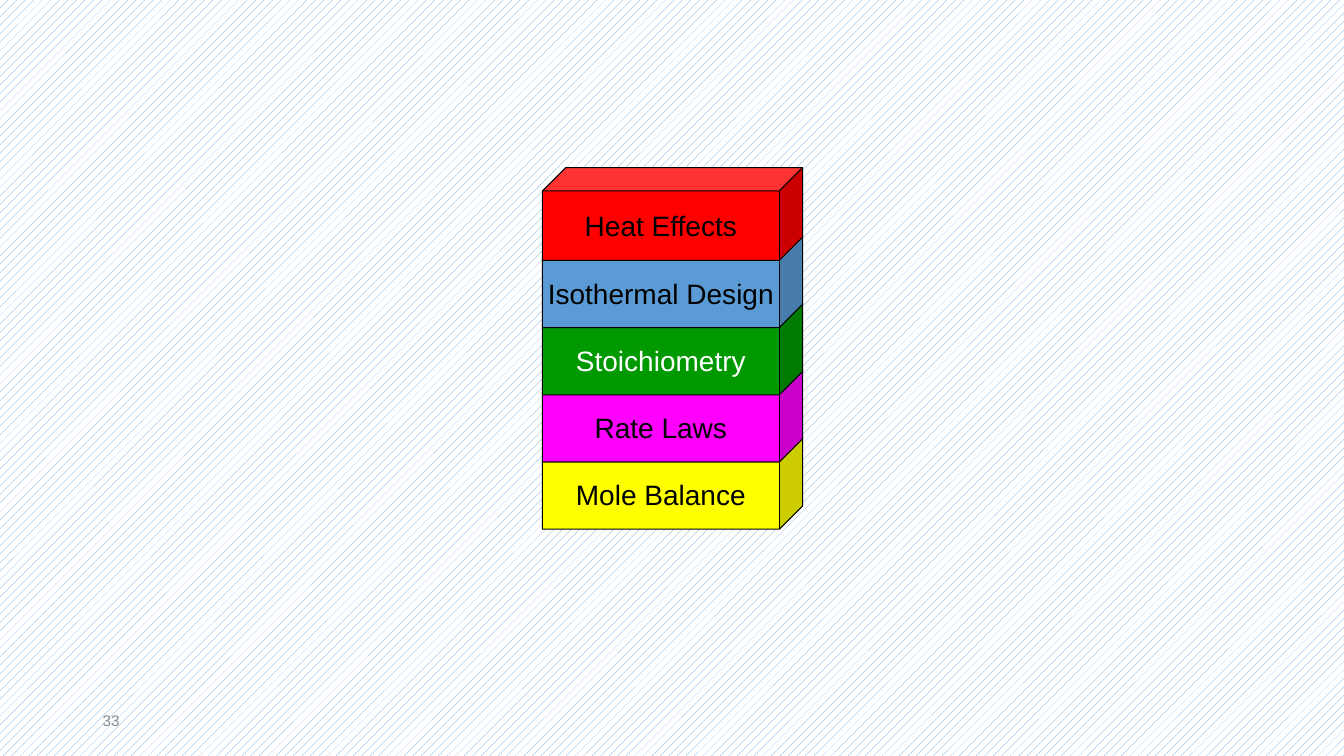
"""Build a slide with a stack of labelled reactor design blocks."""
from pptx import Presentation
from pptx.dml.color import RGBColor
from pptx.enum.dml import MSO_PATTERN
from pptx.enum.shapes import MSO_SHAPE
from pptx.enum.text import MSO_ANCHOR, PP_ALIGN
from pptx.util import Inches, Pt

BLOCKS = [
    ("Mole Balance", "FFFF00", "000000"),
    ("Rate Laws", "FF00FF", "000000"),
    ("Stoichiometry", "009900", "FFFFFF"),
    ("Isothermal Design", "5B9BD5", "000000"),
    ("Heat Effects", "FF0000", "000000"),
]
PAGE_NUMBER = "33"
STACK_LEFT, BOTTOM_TOP = 5.38, 4.33
BLOCK_WIDTH, BLOCK_HEIGHT = 2.58, 0.92
STEP = 2 / 3


def paint(color_format, value):
    color_format.rgb = RGBColor.from_string(value)


def write(shape, text, size, color, align, wrap):
    frame = shape.text_frame
    frame.text = text
    frame.word_wrap = wrap
    frame.vertical_anchor = MSO_ANCHOR.MIDDLE
    para = frame.paragraphs[0]
    para.alignment = align
    font = para.runs[0].font
    font.name = "Arial"
    font.size = Pt(size)
    paint(font.color, color)


def add_block(page, level, label, fill, text_color):
    block = page.shapes.add_shape(
        MSO_SHAPE.CUBE, Inches(STACK_LEFT), Inches(BOTTOM_TOP - level * STEP),
        Inches(BLOCK_WIDTH), Inches(BLOCK_HEIGHT))
    block.adjustments[0] = 0.25
    block.shadow.inherit = False
    block.fill.solid()
    paint(block.fill.fore_color, fill)
    paint(block.line.color, "000000")
    block.line.width = Pt(0.75)
    write(block, label, 20, text_color, PP_ALIGN.CENTER, False)


def main():
    deck = Presentation()
    deck.slide_width, deck.slide_height = Inches(13.33), Inches(7.5)
    page = deck.slides.add_slide(deck.slide_layouts[6])
    backdrop = page.background.fill
    backdrop.patterned()
    backdrop.pattern = MSO_PATTERN.PERCENT_20
    paint(backdrop.fore_color, "5B9BD5")
    paint(backdrop.back_color, "FFFFFF")
    for level, block in enumerate(BLOCKS):
        add_block(page, level, *block)
    number = page.shapes.add_textbox(
        Inches(0.92), Inches(6.95), Inches(3), Inches(0.4))
    write(number, PAGE_NUMBER, 11, "8C8C8C", PP_ALIGN.LEFT, True)
    deck.save("out.pptx")


if __name__ == "__main__":
    main()
